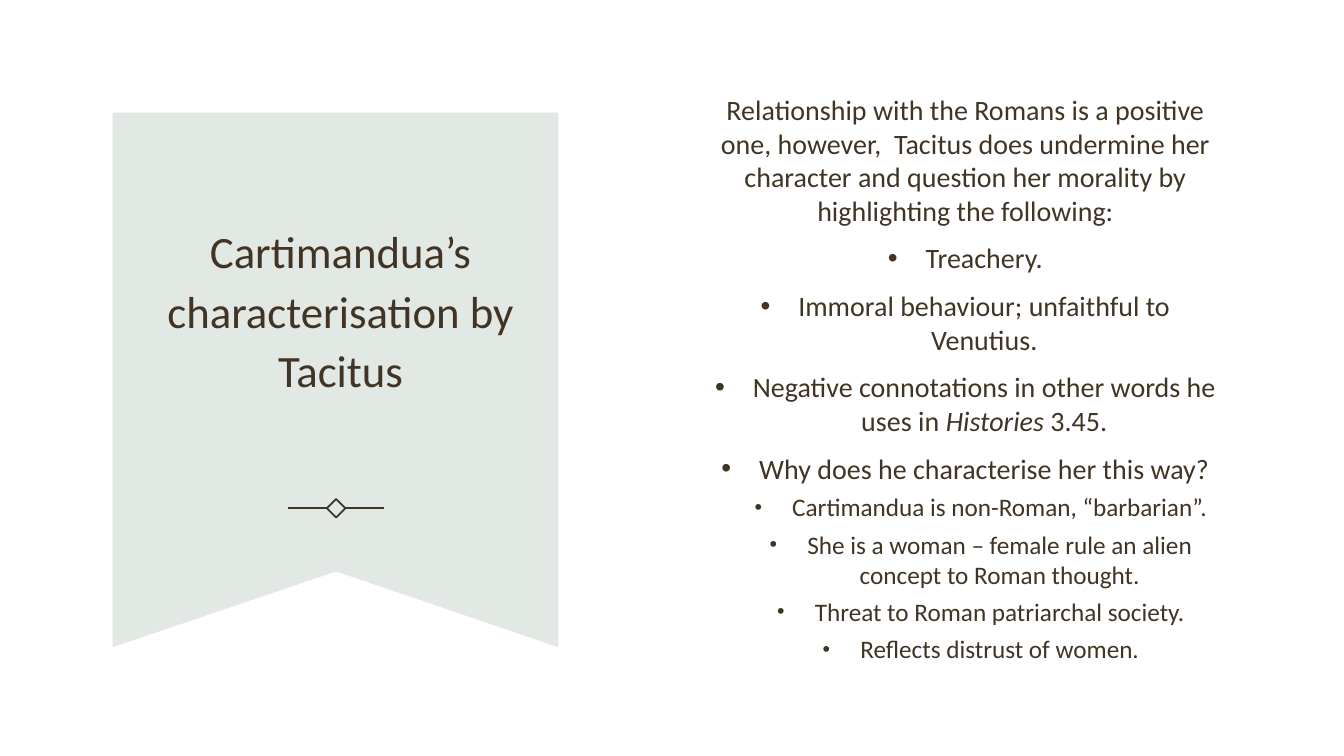
from lxml import etree
from pptx import Presentation
from pptx.dml.color import RGBColor
from pptx.enum.shapes import MSO_CONNECTOR, MSO_SHAPE
from pptx.enum.text import MSO_ANCHOR, PP_ALIGN
from pptx.oxml.ns import qn
from pptx.util import Cm, Pt

# Content: (style, [(text, italic), ...])
TITLE = "Cartimandua’s characterisation by Tacitus"
BODY = [
    ("intro", [("Relationship with the Romans is a positive one, however,  Tacitus does "
                "undermine her character and question her morality by highlighting "
                "the following:", False)]),
    ("point", [("Treachery.", False)]),
    ("point", [("Immoral behaviour; unfaithful to Venutius.", False)]),
    ("point", [("Negative connotations in other words he uses in ", False),
               ("Histories", True), (" 3.45.", False)]),
    ("point", [("Why does he characterise her this way?", False)]),
    ("reason", [("Cartimandua is non-Roman, “barbarian”.", False)]),
    ("reason", [("She is a woman – female rule an alien concept to Roman thought.", False)]),
    ("reason", [("Threat to Roman patriarchal society.", False)]),
    ("reason", [("Reflects distrust of women.", False)]),
]

# Style: level, size, space before, left margin in cm (0 = no bullet), bullet percent
STYLES = {
    "intro": (0, 20, 10, 0, 100),
    "point": (0, 20, 10, 0.95, 100),
    "reason": (1, 18, 5, 1.73, 85),
}
HANGING = 0.95
FONT = "Calibri"
BROWN = RGBColor(0x41, 0x34, 0x24)
SAGE = RGBColor(0xE2, 0xE8, 0xE3)
CENTER = PP_ALIGN.CENTER
MIDDLE = MSO_ANCHOR.MIDDLE
STRAIGHT = MSO_CONNECTOR.STRAIGHT
SQUARE = MSO_SHAPE.RECTANGLE

# Ribbon and ornament geometry in cm
LEFT, TOP, RIGHT, BOTTOM, NOTCH = 2.84, 2.84, 14.07, 16.31, 14.4
MID_X, MID_Y = 8.47, 12.81
SIDE, LINE_NEAR, LINE_FAR = 0.33, 0.22, 1.21


def add_text_frame(left, top, width, height):
    tf = slide.shapes.add_textbox(Cm(left), Cm(top), Cm(width), Cm(height)).text_frame
    tf.word_wrap = True
    tf.vertical_anchor = MIDDLE
    return tf


def add_run(p, text, size, italic=False):
    r = p.add_run()
    r.text = text
    r.font.name = FONT
    r.font.size = Pt(size)
    r.font.italic = italic
    r.font.color.rgb = BROWN


def add_bullet(p, margin, percent):
    pPr = p._p.get_or_add_pPr()
    pPr.set("marL", str(Cm(margin)))
    pPr.set("indent", str(-Cm(HANGING)))
    etree.SubElement(pPr, qn("a:buSzPct")).set("val", str(percent * 1000))
    etree.SubElement(pPr, qn("a:buFont")).set("typeface", "Arial")
    etree.SubElement(pPr, qn("a:buChar")).set("char", "•")


prs = Presentation()
prs.slide_width, prs.slide_height = Cm(33.87), Cm(19.05)
slide = prs.slides.add_slide(prs.slide_layouts[6])

# Ribbon
outline = [(RIGHT, TOP), (RIGHT, BOTTOM), (MID_X, NOTCH), (LEFT, BOTTOM)]
builder = slide.shapes.build_freeform(Cm(LEFT), Cm(TOP))
builder.add_line_segments([(Cm(x), Cm(y)) for x, y in outline], close=True)
ribbon = builder.convert_to_shape()
ribbon.shadow.inherit = False
ribbon.fill.solid()
ribbon.fill.fore_color.rgb = SAGE
ribbon.line.fill.background()

# Ornament: diamond with a line on each side
diamond = slide.shapes.add_shape(SQUARE, Cm(MID_X - SIDE / 2), Cm(MID_Y - SIDE / 2),
                                 Cm(SIDE), Cm(SIDE))
diamond.rotation = 45
diamond.shadow.inherit = False
diamond.fill.background()
strokes = [diamond]
for side in (-1, 1):
    line = slide.shapes.add_connector(STRAIGHT, Cm(MID_X + side * LINE_NEAR), Cm(MID_Y),
                                      Cm(MID_X + side * LINE_FAR), Cm(MID_Y))
    etree.SubElement(line._element.spPr, qn("a:effectLst"))
    strokes.append(line)
for sp in strokes:
    sp.line.color.rgb = BROWN
    sp.line.width = Pt(1.25)

# Title
p = add_text_frame(3.91, 3.76, 9.35, 7.98).paragraphs[0]
p.alignment = CENTER
p.line_spacing = 1.1
add_run(p, TITLE, 32)

# Body
tf = add_text_frame(17.75, 2.01, 13.16, 15.04)
for i, (style, runs) in enumerate(BODY):
    level, size, before, margin, percent = STYLES[style]
    p = tf.add_paragraph() if i else tf.paragraphs[0]
    p.level = level
    p.alignment = CENTER
    p.space_before = Pt(before)
    if margin:
        add_bullet(p, margin, percent)
    for text, italic in runs:
        add_run(p, text, size, italic)

prs.save("out.pptx")
